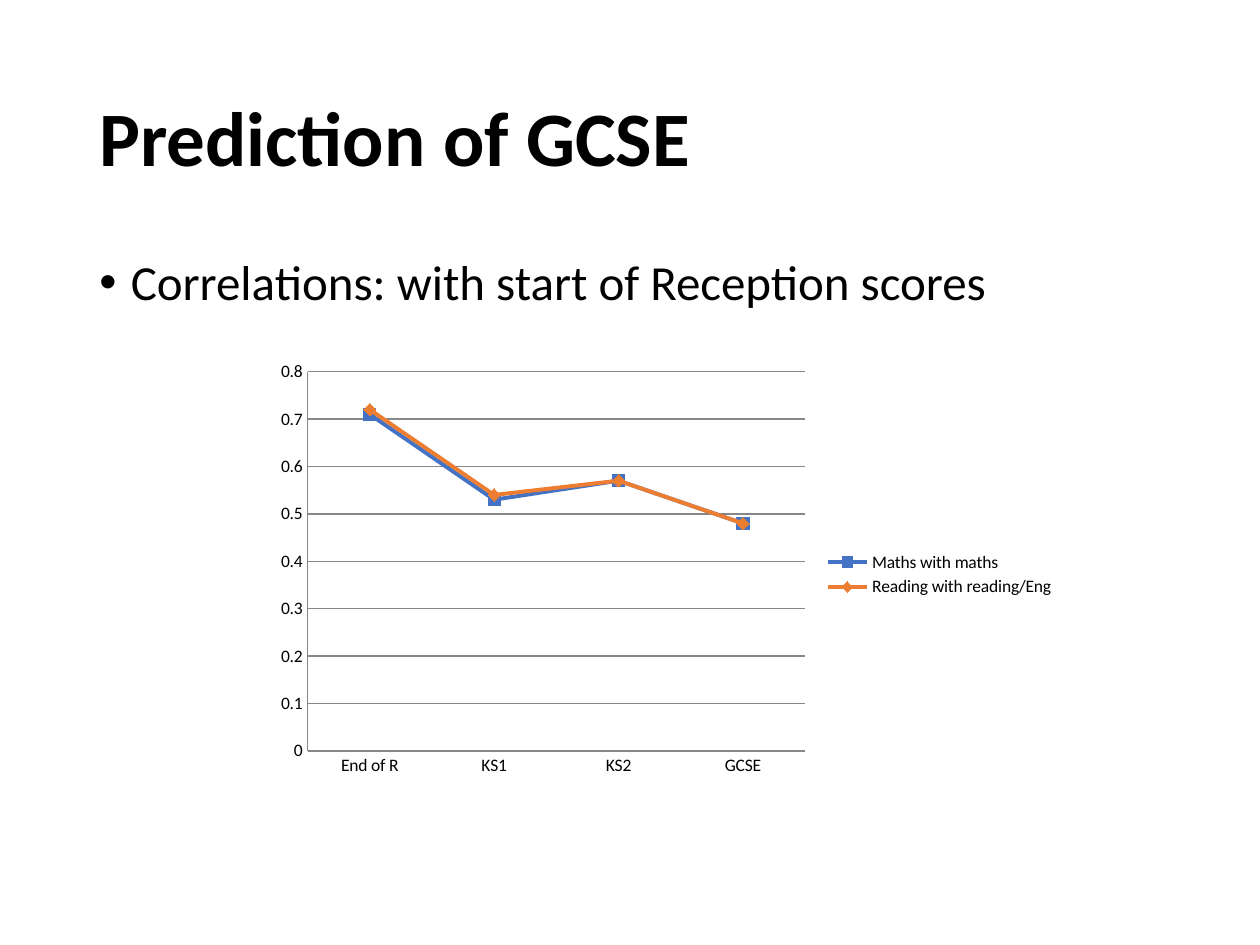
from lxml.etree import SubElement as Sub
from pptx import Presentation
from pptx.chart.data import CategoryChartData as Data
from pptx.dml.color import RGBColor as RGB
from pptx.enum.chart import XL_CHART_TYPE as Kind
from pptx.enum.chart import XL_LEGEND_POSITION as Side
from pptx.enum.chart import XL_MARKER_STYLE as Mark
from pptx.enum.chart import XL_TICK_MARK as Tick
from pptx.enum.text import MSO_ANCHOR as Anchor
from pptx.oxml.ns import qn
from pptx.util import Inches, Pt

BLACK = RGB(0x00, 0x00, 0x00)
BLUE = RGB(0x44, 0x72, 0xC4)
ORANGE = RGB(0xED, 0x7D, 0x31)
GREY = RGB(0x87, 0x87, 0x87)
FONT = "Calibri"

STAGES = ["End of R", "KS1", "KS2", "GCSE"]
SERIES = [
    ("Maths with maths", [0.71, 0.53, 0.57, 0.48], BLUE, Mark.SQUARE),
    ("Reading with reading/Eng", [0.72, 0.54, 0.57, 0.48], ORANGE, Mark.DIAMOND),
]
PLOT = {"x": 0.13, "y": 0.04, "w": 0.57, "h": 0.86}


def style(font, size, bold=False):
    font.name, font.size, font.bold = FONT, Pt(size), bold
    font.color.rgb = BLACK


def write(frame, text, size, bold=False, before=0, bullet=None):
    par = frame.paragraphs[0]
    par.line_spacing = 0.9
    par.space_before = Pt(before)
    run = par.add_run()
    run.text = text
    style(run.font, size, bold)
    if bullet:
        props = par._p.get_or_add_pPr()
        props.set("marL", str(Inches(0.25)))
        props.set("indent", str(-Inches(0.25)))
        Sub(props, qn("a:buFont"), typeface="Arial")
        Sub(props, qn("a:buChar"), char=bullet)


def place(chart, shares):
    """Fix the inner plot area at shares of the chart's size."""
    area = chart._chartSpace.chart.plotArea
    for old in area.findall(qn("c:layout")):
        area.remove(old)
    layout = Sub(area, qn("c:layout"))
    area.insert(0, layout)
    manual = Sub(layout, qn("c:manualLayout"))
    Sub(manual, qn("c:layoutTarget"), val="inner")
    for key in "xy":
        Sub(manual, qn(f"c:{key}Mode"), val="edge")
    for key, share in shares.items():
        Sub(manual, qn(f"c:{key}"), val=str(share))


class Page:
    """One slide; boxes are (left, top, width, height) in percent of its size."""

    def __init__(self, deck):
        self.slide = deck.slides.add_slide(deck.slide_layouts[6])
        self.size = (deck.slide_width, deck.slide_height) * 2

    def rect(self, box):
        return [int(share * side / 100) for share, side in zip(box, self.size)]

    def text(self, box, text, anchor=Anchor.TOP, **form):
        frame = self.slide.shapes.add_textbox(*self.rect(box)).text_frame
        frame.word_wrap = True
        frame.vertical_anchor = anchor
        write(frame, text, **form)

    def lines(self, box, cats, series):
        data = Data()
        data.categories = cats
        for name, vals, *_ in series:
            data.add_series(name, vals)
        chart = self.slide.shapes.add_chart(
            Kind.LINE_MARKERS, *self.rect(box), data).chart
        style(chart.font, 10)
        chart.has_title = False
        chart.has_legend = True
        chart.legend.position = Side.RIGHT
        chart.legend.include_in_layout = False
        place(chart, PLOT)
        self.axes(chart)
        plot = chart.plots[0]
        plot.vary_by_categories = False
        for line, (_, _, color, mark) in zip(plot.series, series):
            self.line(line, color, mark)

    def axes(self, chart):
        for axis in (chart.category_axis, chart.value_axis):
            axis.major_tick_mark = axis.minor_tick_mark = Tick.NONE
            self.rule(axis.format.line, GREY, 0.75)
        scale = chart.value_axis
        scale.minimum_scale, scale.maximum_scale, scale.major_unit = 0, 0.8, 0.1
        scale.tick_labels.number_format = "General"
        scale.tick_labels.number_format_is_linked = False
        scale.has_major_gridlines = True
        self.rule(scale.major_gridlines.format.line, GREY, 0.75)

    def line(self, line, color, mark):
        line.smooth = False
        self.rule(line.format.line, color, 2.25)
        line.marker.style = mark
        line.marker.size = 7
        line.marker.format.fill.solid()
        line.marker.format.fill.fore_color.rgb = color
        self.rule(line.marker.format.line, color, 0.75)

    def rule(self, line, color, width):
        line.color.rgb = color
        line.width = Pt(width)


def main():
    deck = Presentation()
    deck.slide_width, deck.slide_height = Inches(10), Inches(7.5)
    page = Page(deck)
    page.text((6.9, 5.33, 86.2, 19.33), "Prediction of GCSE",
              anchor=Anchor.MIDDLE, size=44, bold=True)
    page.text((6.9, 26.67, 86.2, 63.47),
              "Correlations: with start of Reception scores",
              size=28, before=10, bullet="•")
    page.lines((15.4, 37.47, 69.3, 46.67), STAGES, SERIES)
    deck.save("out.pptx")


if __name__ == "__main__":
    main()
